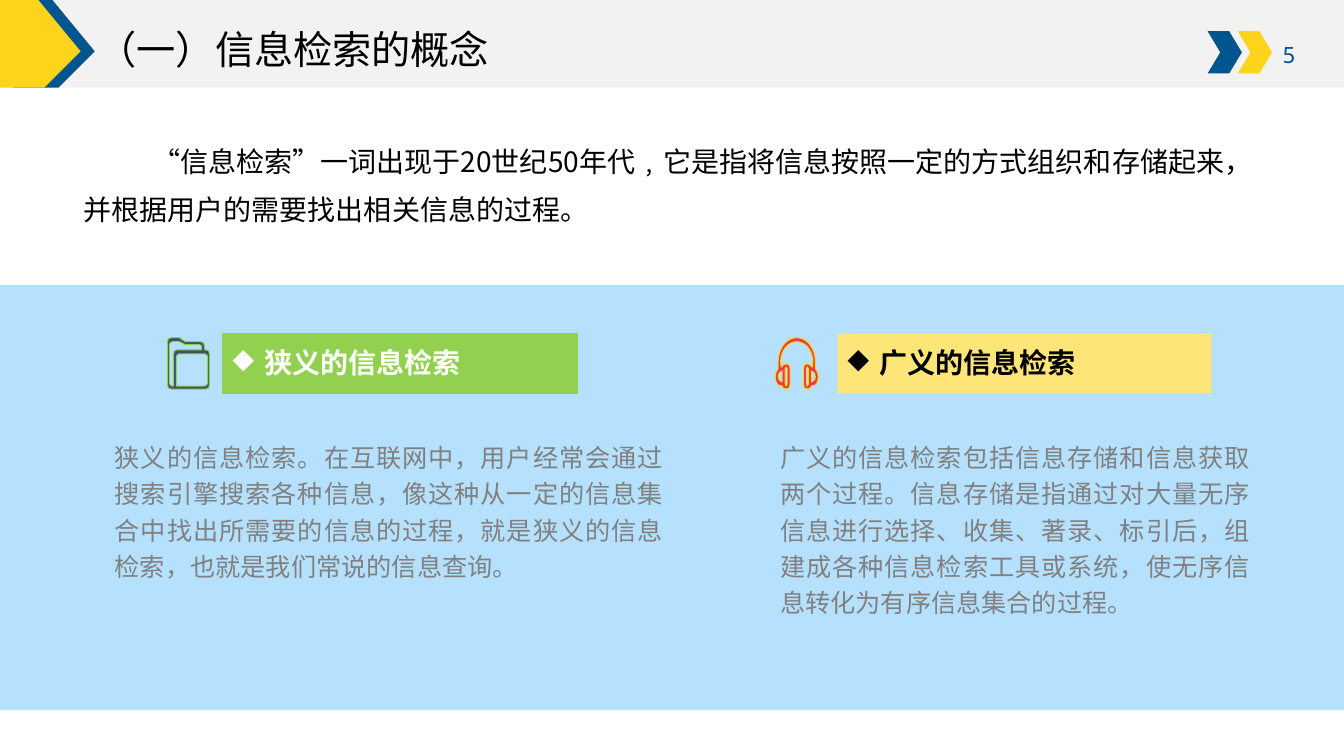
import math
from dataclasses import dataclass

from lxml import etree
from pptx import Presentation
from pptx.dml.color import RGBColor
from pptx.enum import lang, shapes, text
from pptx.oxml import ns
from pptx.util import Pt

CJK, MONO = "Noto Sans CJK SC", "Noto Sans Mono"
BLUE, YELLOW, BLACK, GREY = "01558E", "FED31C", "000000", "808080"
SLIDE_W, SLIDE_H, BAND_H = 960, 540, 62.64
ICON_UNIT = 0.72  # points per step of the icon drawing grid
Points = list[tuple[float, float]]


@dataclass
class Card:
    label: str
    label_left: float
    label_width: float
    fill: str
    color: str
    line: str | None
    body: str
    body_left: float
    body_width: float
    body_height: float


@dataclass
class Icon:
    left: float
    fill: str
    line: str
    contours: list[Points]


def paint(fmt, color: str) -> None:
    fmt.solid()
    fmt.fore_color.rgb = RGBColor.from_string(color)


def style(shape, fill: str, line: str | None = None):
    shape.shadow.inherit = False
    paint(shape.fill, fill)
    if line:
        paint(shape.line.fill, line)
        shape.line.width = Pt(0.75)
    else:
        shape.line.fill.background()
    return shape


def add_block(s, kind, x: float, y: float, w: float, h: float,
              fill: str, line: str | None = None):
    return style(s.shapes.add_shape(kind, Pt(x), Pt(y), Pt(w), Pt(h)), fill, line)


def add_outline(s, contours: list[Points], x: float, y: float,
                fill: str, line: str | None = None, unit: float = 1):
    """Draw closed contours; coordinates keep two decimals."""
    scaled = [[(px * 100, py * 100) for px, py in c] for c in contours]
    fb = s.shapes.build_freeform(*scaled[0][0], scale=Pt(unit) / 100)
    for i, contour in enumerate(scaled):
        if i:
            fb.move_to(*contour[0])
        fb.add_line_segments(contour[1:], close=True)
    return style(fb.convert_to_shape(Pt(x), Pt(y)), fill, line)


def write(tf, words: str, size: float, color: str, font: str = CJK,
          align=None, spacing: float = 1, bold: bool = False):
    tf.word_wrap = True
    p = tf.paragraphs[0]
    p.alignment, p.line_spacing = align, spacing
    r = p.add_run()
    r.text = words
    r.font.size, r.font.bold, r.font.name = Pt(size), bold, font
    r.font.language_id = lang.MSO_LANGUAGE_ID.SIMPLIFIED_CHINESE
    paint(r.font.fill, color)
    etree.SubElement(r.font._element, ns.qn("a:ea"), typeface=font)
    return p


def add_text(s, x: float, y: float, w: float, h: float, words: str,
             size: float, color: str, **options):
    tb = s.shapes.add_textbox(Pt(x), Pt(y), Pt(w), Pt(h))
    return write(tb.text_frame, words, size, color, **options)


def indent(p, first: float, left: float = 0, bullet: str | None = None) -> None:
    pPr = p._p.get_or_add_pPr()
    pPr.set("marL", str(Pt(left)))
    pPr.set("indent", str(Pt(first)))
    if bullet:
        etree.SubElement(pPr, ns.qn("a:buChar"), char=bullet)


def add_card(s, card: Card) -> None:
    label = add_block(s, shapes.MSO_SHAPE.RECTANGLE, card.label_left, 238.3,
                      card.label_width, 42.5, card.fill, card.line)
    label.text_frame.vertical_anchor = text.MSO_ANCHOR.TOP
    p = write(label.text_frame, card.label, 20, card.color, bold=True,
              align=text.PP_ALIGN.JUSTIFY, spacing=1.2)
    indent(p, -22.5, 22.5, "◆")
    add_text(s, card.body_left, 308.2, card.body_width, card.body_height, card.body,
             18, GREY, align=text.PP_ALIGN.JUSTIFY, spacing=1.2)


def quarter(rx: float, ry: float) -> Points:
    """Left quarter of the headband, from its top down to the ear."""
    angles = [math.radians(90 + 10 * i) for i in range(10)]
    return [(21.5 + rx * math.cos(a), 24 - ry * math.sin(a)) for a in angles]


def mirror(points: Points) -> Points:
    return [(43 - x, y) for x, y in reversed(points)]


def headphones() -> list[Points]:
    ear = [(3, 31), (1, 34), (0, 39), (1, 44), (3, 47), (7, 48), (8, 50), (11, 51),
           (14, 50), (15, 46), (15, 31), (14, 27), (11, 26), (8, 27), (7, 29), (6, 29)]
    half = quarter(18.5, 24) + ear + quarter(16, 20)[::-1]
    cup = [(10, 31), (11, 29), (12, 31), (12, 46), (11, 48), (10, 46)]
    pad = [(7, 33), (7, 44), (4, 42), (3, 39), (4, 35)]
    return [half + mirror(half), cup, pad, mirror(cup), mirror(pad)]


FOLDER = [
    [(38, 12), (37, 12), (37, 9), (36, 5), (33, 4), (18, 4), (12, 0), (4, 0), (1, 1),
     (0, 5), (0, 46), (1, 50), (4, 51), (38, 51), (41, 50), (42, 46), (42, 17), (41, 13)],
    [(5, 48), (3, 47), (2, 45), (2, 7), (3, 5), (5, 4), (12, 4), (18, 7), (32, 7),
     (34, 8), (34, 12), (10, 12), (7, 13), (6, 17), (6, 48)],
    [(40, 45), (39, 47), (37, 48), (9, 48), (9, 19), (10, 17), (12, 16), (37, 16),
     (39, 17), (40, 19)],
]
ICONS = [Icon(119.5, "3F506C", "92D050", FOLDER),
         Icon(553.7, "E33A59", YELLOW, headphones())]
CARDS = [
    Card("狭义的信息检索", 159.1, 253.4, "92D050", "FFFFFF", "92D050",
         "狭义的信息检索。在互联网中，用户经常会通过搜索引擎搜索各种信息，像这种从一定的"
         "信息集合中找出所需要的信息的过程，就是狭义的信息检索，也就是我们常说的信息查询。",
         74.9, 406, 112.3),
    Card("广义的信息检索", 598.3, 267.1, "FEE577", BLACK, None,
         "广义的信息检索包括信息存储和信息获取两个过程。信息存储是指通过对大量无序信息进行"
         "选择、收集、著录、标引后，组建成各种信息检索工具或系统，使无序信息转化为有序信息"
         "集合的过程。",
         550.1, 349.9, 177.1),
]


def main() -> None:
    prs = Presentation()
    prs.slide_width, prs.slide_height = Pt(SLIDE_W), Pt(SLIDE_H)
    s = prs.slides.add_slide(prs.slide_layouts[5])
    rect, chevron = shapes.MSO_SHAPE.RECTANGLE, shapes.MSO_SHAPE.CHEVRON

    # Header band with chevrons, page number and corner arrows
    add_block(s, rect, 0, 0, SLIDE_W, BAND_H, "F2F2F2")
    for x, color in ((862.6, BLUE), (884.2, YELLOW)):
        sp = add_block(s, chevron, x, 22.3, 24.5, 30.2, color)
        sp.adjustments[0] = 0.37
    add_text(s, 900, 25.9, 51.1, 26.6, "5 ", 16, BLUE, font=MONO,
             align=text.PP_ALIGN.CENTER)
    arrow = [(0, 0), (28.08, 0), (58.32, 36.72), (32.4, BAND_H), (0, BAND_H)]
    for x, color in ((9.36, BLUE), (-0.72, YELLOW)):
        add_outline(s, [arrow], x, 0, color)

    # Title, brought in front of the band
    title = s.shapes.title
    title.left, title.top, title.width, title.height = Pt(62.6), Pt(16.6), Pt(849.6), Pt(41)
    title.text_frame.auto_size = text.MSO_AUTO_SIZE.NONE
    title.text_frame.vertical_anchor = text.MSO_ANCHOR.MIDDLE
    write(title.text_frame, "（一）信息检索的概念", 28, BLACK,
          align=text.PP_ALIGN.LEFT, spacing=0.9)
    title.element.getparent().append(title.element)

    # Definition
    p = add_text(s, 52.6, 88.6, 847.4, 103.7,
                 "“信息检索”一词出现于20世纪50年代﹐它是指将信息按照一定的方式组织和存储起来，"
                 "并根据用户的需要找出相关信息的过程。", 20, BLACK, spacing=1.45)
    indent(p, 49)

    # Narrow and broad meanings
    add_block(s, rect, 0, 203.4, SLIDE_W, 303.8, "B6E1FE")
    for card in CARDS:
        add_card(s, card)
    for icon in ICONS:
        add_outline(s, icon.contours, icon.left, 241.2, icon.fill, icon.line, ICON_UNIT)

    prs.save("out.pptx")


if __name__ == "__main__":
    main()
